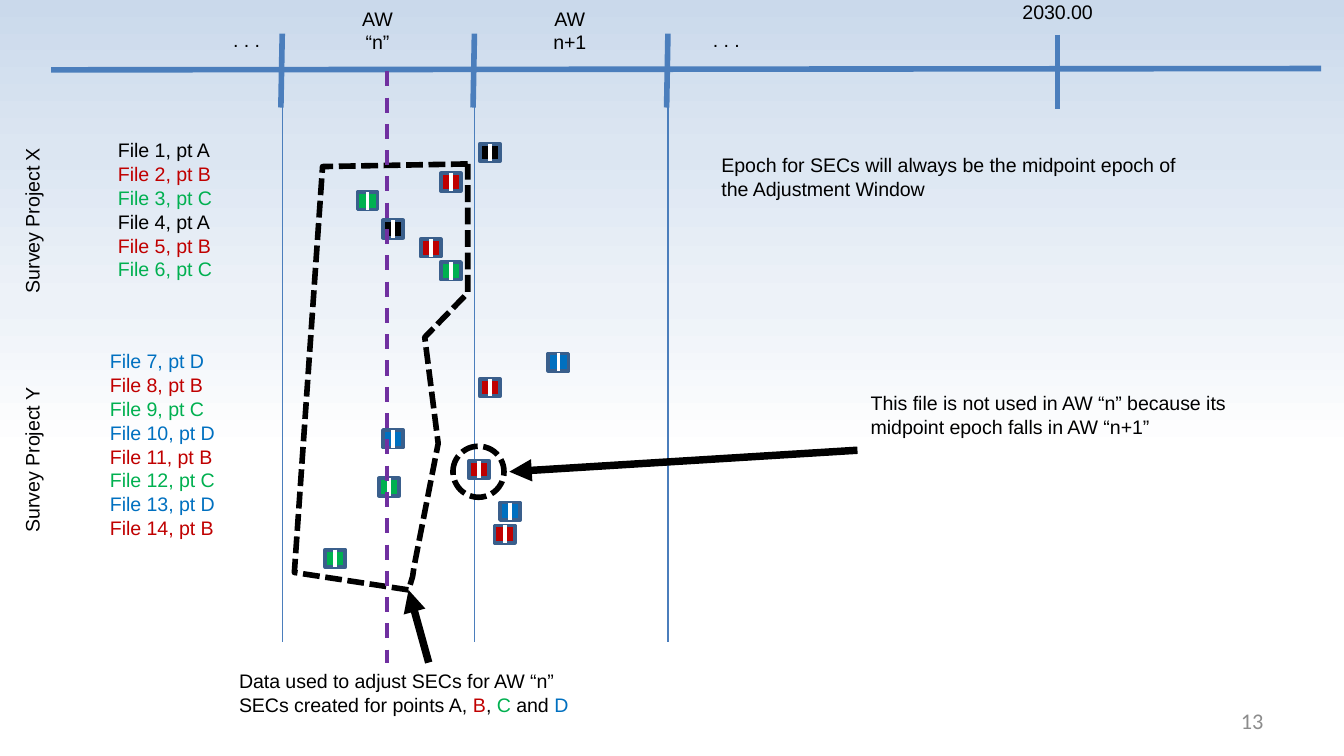
"""Build the adjustment-window timeline slide."""
from copy import deepcopy
from typing import NamedTuple

from pptx import Presentation
from pptx.dml.color import RGBColor
from pptx.enum.dml import MSO_LINE
from pptx.enum.shapes import MSO_CONNECTOR, MSO_SHAPE
from pptx.enum.text import MSO_ANCHOR, MSO_AUTO_SIZE, PP_ALIGN
from pptx.oxml.ns import qn
from pptx.util import Inches, Pt

LEFT, CENTER, RIGHT = PP_ALIGN.LEFT, PP_ALIGN.CENTER, PP_ALIGN.RIGHT
DASH, SHORT_DASH = MSO_LINE.DASH, MSO_LINE.SQUARE_DOT
RECT, OVAL = MSO_SHAPE.RECTANGLE, MSO_SHAPE.OVAL
STRAIGHT = MSO_CONNECTOR.STRAIGHT
TOP, BOTTOM = 0, 2

WIDTH, HEIGHT = Inches(10), Inches(5.625)
GRID = WIDTH / 100
BLACK, WHITE, GRAY = "000000", "FFFFFF", "8C8C8C"
AXIS, MARKER_EDGE, MIDPOINT = "4B7EBC", "3A5F8C", "7030A0"
POINT_COLORS = {"A": BLACK, "B": "C00000", "C": "00B050", "D": "0070C0"}
SKY = ((40, WHITE), (60, "EDF2F8"), (80, "DCE6F2"), (100, "CAD9EB"))
LABEL_PITCH = 1.77
WINDOW_EDGES = (21, 35.3, 49.7)


class Box(NamedTuple):
    """A rectangle in grid columns and rows."""
    x: float
    y: float
    w: float
    h: float


class Run(NamedTuple):
    """A stretch of text in one colour."""
    text: str
    color: str = BLACK


class File(NamedTuple):
    """A survey file: its point and the corner of its marker."""
    point: str
    x: float
    y: float


class Project(NamedTuple):
    """A survey project: name, heading row, label corner and files."""
    name: str
    heading_y: float
    x: float
    y: float
    files: tuple[File, ...]


PROJECTS = (
    Project("Survey Project X", 14.9, 7.8, 9.8, (
        File("A", 35.7, 10.7), File("B", 32.8, 12.9), File("C", 26.6, 14.3),
        File("A", 28.5, 16.4), File("B", 31.3, 17.8), File("C", 32.8, 19.5))),
    Project("Survey Project Y", 32.7, 7.2, 25.5, (
        File("D", 40.8, 26.3), File("B", 35.7, 28.2), File("C", 24.2, 40.9),
        File("D", 28.5, 32), File("B", 34.9, 34.3), File("C", 28.2, 35.6),
        File("D", 37.2, 37.4), File("B", 36.8, 39.1))),
)
OUTLINE = ((34.8, 12.2), (24, 12.4), (21.9, 42.6), (30.4, 43.9), (30.7, 42.9),
           (30.8, 42.2), (32.6, 33), (31.6, 25.1), (34.8, 21.8))


def grid(value: float) -> int:
    """Turn grid units into a slide length."""
    return round(value * GRID)


def rgb(color: str) -> RGBColor:
    """Turn a hex string into a colour."""
    return RGBColor.from_string(color)


def style_line(line, color: str, width: float, dash=None) -> None:
    """Set a line's colour, width and dash."""
    line.color.rgb = rgb(color)
    line.width = Pt(width)
    if dash is not None:
        line.dash_style = dash


def add_text(s, box: Box, *paragraphs: tuple[Run, ...], size: float = 10.5,
             font: str = "Arial", align=LEFT, wrap: bool = False,
             grow: bool = True, anchor=MSO_ANCHOR.TOP, rotation: float = 0):
    """Add a text box with one tuple of runs for each paragraph."""
    sp = s.shapes.add_textbox(*map(grid, box))
    sp.rotation = rotation
    tf = sp.text_frame
    tf.word_wrap = wrap
    tf.auto_size = MSO_AUTO_SIZE.SHAPE_TO_FIT_TEXT if grow else MSO_AUTO_SIZE.NONE
    tf.vertical_anchor = anchor
    for i, runs in enumerate(paragraphs):
        p = tf.add_paragraph() if i else tf.paragraphs[0]
        p.alignment = align
        for run in runs:
            r = p.add_run()
            r.text = run.text
            r.font.name, r.font.size = font, Pt(size)
            r.font.color.rgb = rgb(run.color)
    return sp


def add_line(s, start: tuple, end: tuple, color: str, width: float,
             dash=None, arrow: bool = False):
    """Add a straight connector, with an arrowhead at its end if asked."""
    cxn = s.shapes.add_connector(STRAIGHT, *map(grid, (*start, *end)))
    style_line(cxn.line, color, width, dash)
    props = cxn._element.spPr
    if arrow:
        ln = props.find(qn("a:ln"))
        ln.append(ln.makeelement(qn("a:tailEnd"), {"type": "triangle"}))
    props.append(props.makeelement(qn("a:effectLst"), {}))
    return cxn


def add_preset(s, kind, box: Box, edge: str, width: float, fill: str = "", dash=None):
    """Add a preset shape, unfilled unless a fill is given."""
    sp = s.shapes.add_shape(kind, *map(grid, box))
    sp.shadow.inherit = False
    if fill:
        sp.fill.solid()
        sp.fill.fore_color.rgb = rgb(fill)
    else:
        sp.fill.background()
    style_line(sp.line, edge, width, dash)
    return sp


def add_marker(s, file: File) -> None:
    """Draw a file's marker with a white midpoint bar."""
    box = Box(file.x, file.y, 1.5, 1.3)
    sp = add_preset(s, RECT, box, MARKER_EDGE, 2, POINT_COLORS[file.point])
    middle = box.x + box.w / 2
    bar = add_line(s, (middle, box.y), (middle, box.y + box.h), WHITE, 2)
    bar.begin_connect(sp, TOP)
    bar.end_connect(sp, BOTTOM)


def add_background(s) -> None:
    """Fill the background with the sky gradient."""
    fill = s.background.fill
    fill.gradient()
    fill.gradient_angle = 90
    stops = s._element.find(".//" + qn("a:gsLst"))
    for _ in range(len(SKY) - len(stops)):
        stops.append(deepcopy(stops[0]))
    for stop, (position, color) in zip(fill.gradient_stops, SKY):
        stop.position = position / 100
        stop.color.rgb = rgb(color)


def add_timeline(s) -> None:
    """Draw the axis, its ticks, window edges and headings."""
    add_line(s, (3.8, 5.2), (98.3, 5.1), AXIS, 3)
    for x in WINDOW_EDGES:
        add_line(s, (x, 2.5), (x - 0.1, 8), AXIS, 3)
        add_line(s, (x, 4.7), (x, 47.8), AXIS, 0.75)
    add_line(s, (78.7, 2.6), (78.7, 8.1), AXIS, 3)
    for x, name in ((25.1, "“n”"), (39.4, "n+1")):
        add_text(s, Box(x, 0, 6, 4.5), (Run("AW"),), (Run(name),), align=CENTER,
                 wrap=True)
    for box, text in ((Box(16, 1.6, 4.7, 2.8), ". . ."),
                      (Box(51.7, 1.6, 4.7, 2.8), ". . ."),
                      (Box(73.7, -0.5, 10, 2.8), "2030.00")):
        add_text(s, box, (Run(text),), align=CENTER, wrap=True)


def add_projects(s) -> None:
    """Draw each project's heading, file labels and markers."""
    number = 0
    for project in PROJECTS:
        add_text(s, Box(-4.1, project.heading_y, 13, 2.8), (Run(project.name),),
                 rotation=270)
        for row, file in enumerate(project.files):
            number += 1
            label = Run(f"File {number}, pt {file.point}", POINT_COLORS[file.point])
            add_text(s, Box(project.x, project.y + row * LABEL_PITCH,
                            9 if number < 10 else 10, 2.8), (label,))
            add_marker(s, file)


def add_notes(s) -> None:
    """Draw the data outline, the circled file, arrows and remarks."""
    first, *rest = [tuple(map(grid, corner)) for corner in OUTLINE]
    builder = s.shapes.build_freeform(*first)
    builder.add_line_segments(rest, close=True)
    sp = builder.convert_to_shape()
    sp.shadow.inherit = False
    sp.fill.background()
    style_line(sp.line, BLACK, 3, SHORT_DASH)
    add_preset(s, OVAL, Box(33.7, 33.2, 3.8, 3.8), BLACK, 3, dash=SHORT_DASH)
    add_line(s, (31.9, 49.3), (30.4, 43.9), BLACK, 4, arrow=True)
    add_line(s, (63.8, 33.5), (37.9, 35.1), BLACK, 4, arrow=True)
    add_line(s, (28.8, 5.3), (28.8, 49.3), MIDPOINT, 2, DASH)
    b, c, d = (Run(point, POINT_COLORS[point]) for point in "BCD")
    add_text(s, Box(16.8, 49.3, 30.1, 4.5), (Run("Data used to adjust SECs for AW “n”"),),
             (Run("SECs created for points A, "), b, Run(", "), c, Run(" and "), d),
             wrap=True)
    add_text(s, Box(63.8, 28.6, 30.1, 4.5), (Run(
        "This file is not used in AW “n” because its midpoint epoch falls in AW “n+1”"),),
        wrap=True)
    add_text(s, Box(52.7, 10.9, 38, 4.5), (Run(
        "Epoch for SECs will always be the midpoint epoch of the Adjustment Window"),),
        wrap=True)
    add_text(s, Box(71.7, 52.1, 23.3, 3), (Run("13", GRAY),), size=12, font="Calibri",
             align=RIGHT, wrap=True, grow=False, anchor=MSO_ANCHOR.MIDDLE)


def main() -> None:
    """Build and save the slide."""
    prs = Presentation()
    prs.slide_width, prs.slide_height = WIDTH, HEIGHT
    s = prs.slides.add_slide(prs.slide_layouts[6])
    add_background(s)
    add_timeline(s)
    add_projects(s)
    add_notes(s)
    prs.save("out.pptx")


if __name__ == "__main__":
    main()
